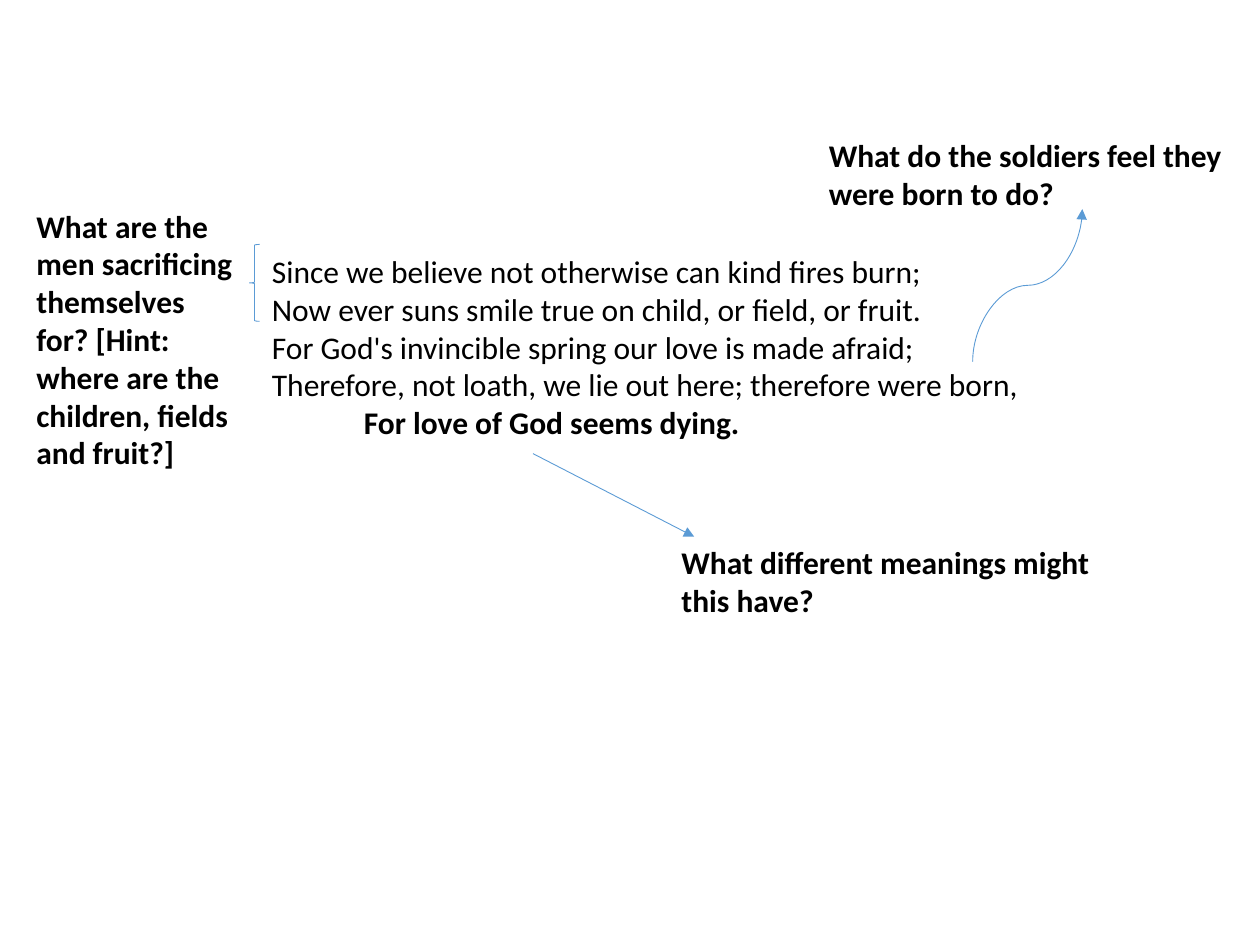
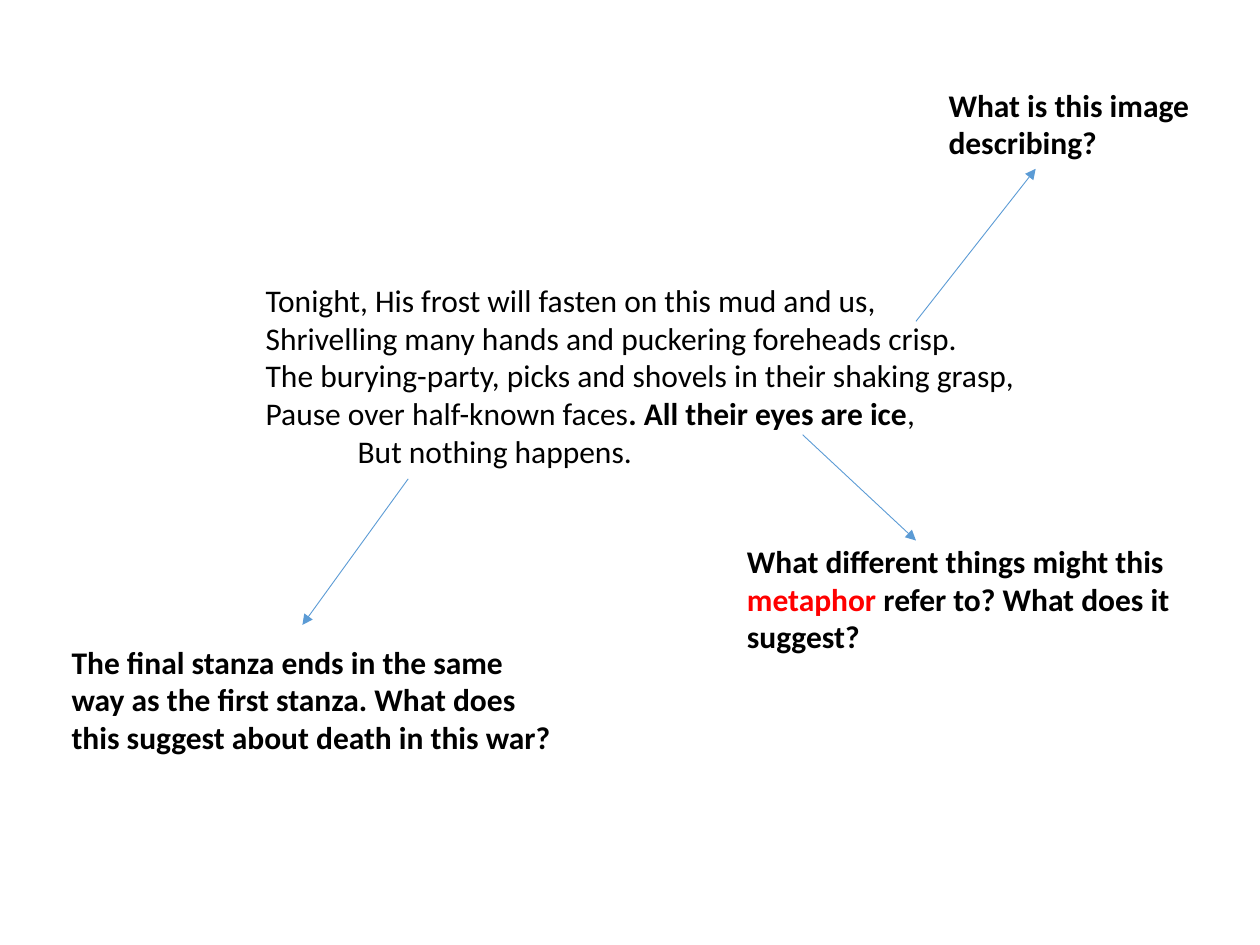
import dataclasses

import lxml.etree
import pptx
import pptx.dml.color
import pptx.enum.shapes
import pptx.enum.text
import pptx.oxml.ns
import pptx.util

Inches = pptx.util.Inches
Connector = pptx.enum.shapes.MSO_CONNECTOR
qn = pptx.oxml.ns.qn


@dataclasses.dataclass(frozen=True)
class Theme:
    font: str = "Calibri"
    size: pptx.util.Length = pptx.util.Pt(18)
    text: pptx.dml.color.RGBColor = pptx.dml.color.RGBColor(0, 0, 0)
    term: pptx.dml.color.RGBColor = pptx.dml.color.RGBColor(255, 0, 0)
    line: pptx.dml.color.RGBColor = pptx.dml.color.RGBColor(0x5B, 0x9B, 0xD5)
    line_width: pptx.util.Length = pptx.util.Pt(0.5)
    last_line_indent: pptx.util.Length = Inches(0.73)


theme = Theme()


def add_text(page, place, lines, indent_last=False):
    box = page.shapes.add_textbox(*map(Inches, place))
    frame = box.text_frame
    frame.word_wrap = True
    frame.auto_size = pptx.enum.text.MSO_AUTO_SIZE.SHAPE_TO_FIT_TEXT
    for index, spans in enumerate(lines):
        para = frame.add_paragraph() if index else frame.paragraphs[0]
        para.font.name = theme.font
        para.font.size = theme.size
        for words, bold, colour in spans:
            span = para.add_run()
            span.text = words
            span.font.bold = bold
            span.font.color.rgb = colour
    if indent_last:
        para._p.get_or_add_pPr().set("marL", str(theme.last_line_indent))


def add_arrow(page, kind, start, end):
    arrow = page.shapes.add_connector(kind, *map(Inches, start + end))
    arrow.line.color.rgb = theme.line
    arrow.line.width = theme.line_width
    lxml.etree.SubElement(arrow.line._get_or_add_ln(), qn("a:tailEnd"), type="triangle")
    lxml.etree.SubElement(arrow._element.spPr, qn("a:effectLst"))
    return arrow


stanzas = [
    {
        "place": (2.06, 1.95, 7.03, 1.62),
        "lines": [
            [("Since we believe not otherwise can kind fires burn;", False, theme.text)],
            [("Now ever suns smile true on child, or field, or fruit.", False, theme.text)],
            [("For God's invincible spring our love is made afraid;", False, theme.text)],
            [("Therefore, not loath, we lie out here; therefore were born,", False, theme.text)],
            [("For love of God seems dying.", True, theme.text)],
        ],
        "questions": [
            ((0.19, 1.59, 1.79, 2.22),
             [("What are the men sacrificing themselves for? "
               "[Hint: where are the children, fields and fruit?]", True, theme.text)]),
            ((5.31, 4.26, 3.78, 0.71),
             [("What different meanings might this have?", True, theme.text)]),
            ((6.48, 1.03, 3.83, 0.71),
             [("What do the soldiers feel they were born to do?", True, theme.text)]),
        ],
        "arrows": [((4.23, 3.6), (5.51, 4.26))],
    },
    {
        "place": (2.01, 2.18, 6.21, 1.62),
        "lines": [
            [("Tonight, His frost will fasten on this mud and us,", False, theme.text)],
            [("Shrivelling many hands and puckering foreheads crisp.", False, theme.text)],
            [("The burying-party, picks and shovels in their shaking grasp,", False, theme.text)],
            [("Pause over half-known faces", False, theme.text),
             (". All their eyes are ice", True, theme.text),
             (",", False, theme.text)],
            [("But nothing happens.", False, theme.text)],
        ],
        "questions": [
            ((7.43, 0.63, 2.34, 0.71),
             [("What is this image describing?", True, theme.text)]),
            ((5.83, 4.25, 3.64, 1.01),
             [("What different things might this ", True, theme.text),
              ("metaphor", True, theme.term),
              (" refer to? What does it suggest?", True, theme.text)]),
            ((0.47, 5.05, 4.03, 1.01),
             [("The final stanza ends in the same way as the first stanza. "
               "What does this suggest about death in this war?", True, theme.text)]),
        ],
        "arrows": [
            ((7.27, 2.55), (8.22, 1.34)),
            ((6.37, 3.45), (7.27, 4.29)),
            ((3.24, 3.8), (2.4, 4.96)),
        ],
    },
]

deck = pptx.Presentation()
deck.slide_width = Inches(10)
deck.slide_height = Inches(7.5)

for stanza in stanzas:
    page = deck.slides.add_slide(deck.slide_layouts.get_by_name("Blank"))
    add_text(page, stanza["place"], stanza["lines"], indent_last=True)
    for place, spans in stanza["questions"]:
        add_text(page, place, [spans])
    for start, end in stanza["arrows"]:
        add_arrow(page, Connector.STRAIGHT, start, end)

sacrifice_page = deck.slides[0]
brace = sacrifice_page.shapes.add_shape(
    pptx.enum.shapes.MSO_SHAPE.LEFT_BRACE, *map(Inches, (1.98, 1.94, 0.08, 0.61)))
brace.shadow.inherit = False
brace.fill.background()
brace.line.color.rgb = theme.line
brace.line.width = theme.line_width

born_curve = add_arrow(sacrifice_page, Connector.CURVE, (8.76, 2.7), (7.55, 1.83))
born_curve._element.spPr.find(qn("a:xfrm")).set("rot", str(90 * 60000))

deck.save("out.pptx")
